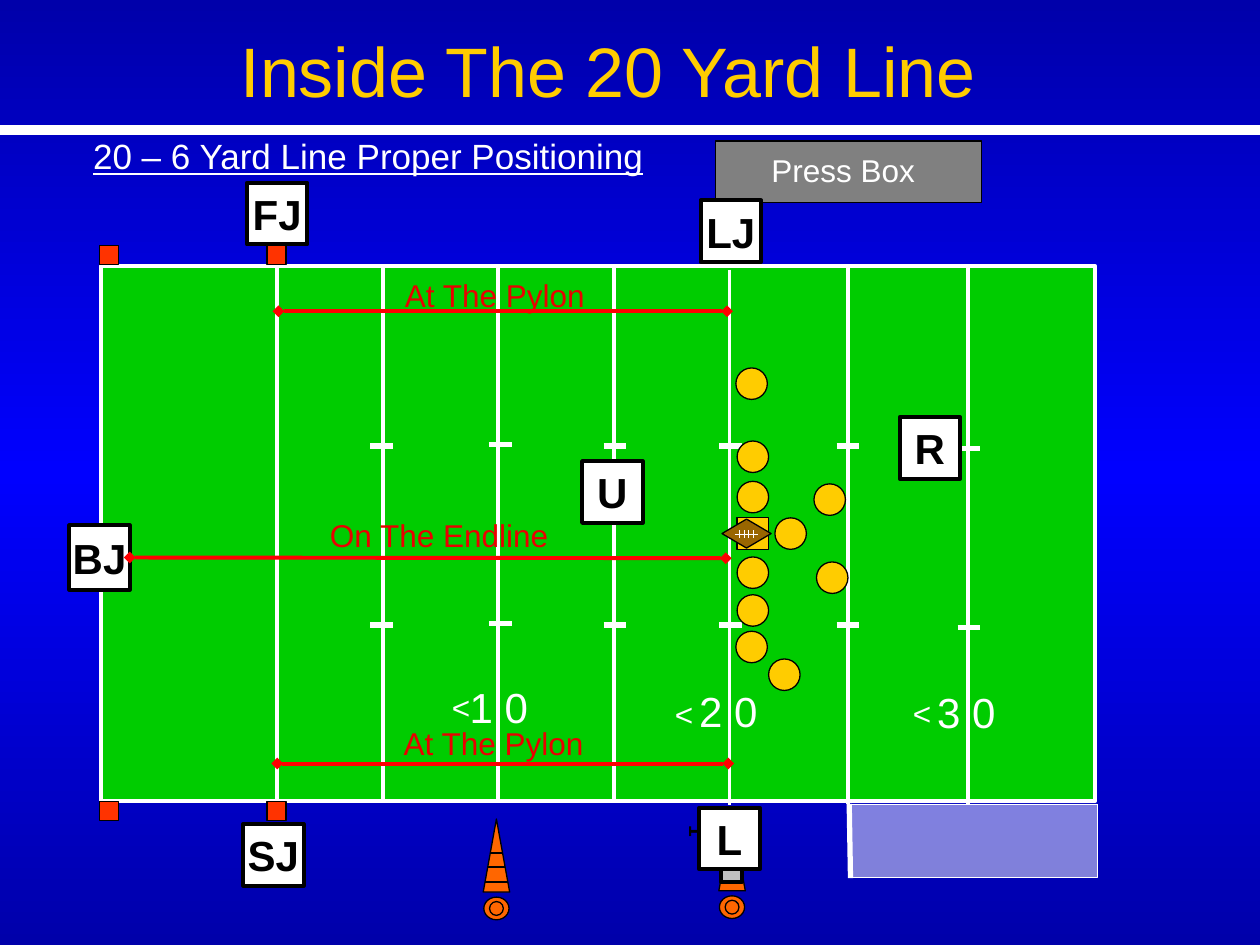
import copy
import pptx
import pptx.dml.color
import pptx.enum.dml
import pptx.enum.shapes
import pptx.enum.text
import pptx.oxml
import pptx.oxml.ns
import pptx.util

SHAPE = pptx.enum.shapes.MSO_SHAPE
ALIGN = pptx.enum.text.PP_ALIGN
ANCHOR = pptx.enum.text.MSO_ANCHOR
colour = pptx.dml.color.RGBColor.from_string
qn = pptx.oxml.ns.qn

deck = pptx.Presentation()
deck.slide_width = pptx.util.Inches(10)
deck.slide_height = pptx.util.Inches(7.5)
column = deck.slide_width / 100
row = deck.slide_height / 75
page = deck.slides.add_slide(deck.slide_layouts[5])


def draw(kind, left, top, wide, high, fill, line="000000", weight=0.75):
    shape = page.shapes.add_shape(
        kind, int(left * column), int(top * row), int(wide * column), int(high * row))
    shape.shadow.inherit = False
    if fill:
        shape.fill.solid()
        shape.fill.fore_color.rgb = colour(fill)
    else:
        shape.fill.background()
    shape.line.color.rgb = colour(line)
    shape.line.width = pptx.util.Pt(weight)
    return shape


def rule(left, top, right, bottom, line="FFFFFF", weight=2.25):
    connector = page.shapes.add_connector(
        pptx.enum.shapes.MSO_CONNECTOR.STRAIGHT,
        int(left * column), int(top * row), int(right * column), int(bottom * row))
    connector.line.color.rgb = colour(line)
    connector.line.width = pptx.util.Pt(weight)
    pptx.oxml.ns
    connector.element.spPr.append(pptx.oxml.parse_xml(
        '<a:effectLst xmlns:a="http://schemas.openxmlformats.org/drawingml/2006/main"/>'))
    return connector


backdrop = page.background.fill
backdrop.gradient()
backdrop.gradient_angle = 270
stops = page.element.find(".//" + qn("a:gsLst"))
stops.insert(1, copy.deepcopy(stops[0]))
for stop, (position, shade) in zip(
        backdrop.gradient_stops, [(0, "0000AA"), (0.5, "0000FF"), (1, "0000AA")]):
    stop.position = position
    stop.color.rgb = colour(shade)

title = page.shapes.title
title.left, title.top = int(18.1 * column), int(1.7 * row)
title.width, title.height = int(61.5 * column), int(7.7 * row)
title.text_frame.vertical_anchor = ANCHOR.TOP
para = title.text_frame.paragraphs[0]
para.alignment = ALIGN.LEFT
span = para.add_run()
span.text = "Inside The 20 Yard Line"
span.font.name = "Arial"
span.font.size = pptx.util.Pt(40)
span.font.color.rgb = colour("FFCC00")

draw(SHAPE.RECTANGLE, 56.8, 11.2, 21.1, 4.9, "808080")
rule(0, 10.3, 100, 10.3, weight=6)
draw(SHAPE.RECTANGLE, 8, 21.1, 78.9, 42.5, "00CC00", "FFFFFF", 2.25)

yard_lines = [(22, 21.1), (30.4, 21.1), (39.5, 21.1), (48.7, 21.1),
              (57.9, 21.4), (67.3, 21.3), (76.8, 21.3)]
for across, top in yard_lines:
    rule(across, top, across, top + 42.5)
hash_marks = [(30.3, 35.4), (39.7, 35.3), (48.8, 35.4),
              (58, 35.4), (67.3, 35.4), (76.9, 35.6)]
for middle, top in hash_marks:
    for down in (top, top + 14.2):
        rule(middle - 0.9, down, middle + 0.9, down, weight=3)
for left in (7.9, 21.2):
    for top in (19.5, 63.6):
        draw(SHAPE.RECTANGLE, left, top, 1.5, 1.5, "FF3300")

rule(67.4, 63.8, 67.5, 69.7, weight=3)
bench = draw(SHAPE.RECTANGLE, 67.5, 63.8, 19.6, 5.8, "FFFFFF", "FFFFFF", 0.25)
bench.line.dash_style = pptx.enum.dml.MSO_LINE.ROUND_DOT
tint = bench.element.spPr.find(qn("a:solidFill"))[0]
tint.append(tint.makeelement(qn("a:alpha"), {"val": "50000"}))

for middle, top, bands in [(39.4, 65, (2.7, 3.8, 5)), (58.1, 64.9, (5,))]:
    draw(SHAPE.ISOSCELES_TRIANGLE, middle - 1.05, top, 2.1, 5.8, "FF6600")
    for band in bands:
        reach = 1.05 * band / 5.8
        rule(middle - reach, top + band, middle + reach, top + band, "000000", 0.75)
    draw(SHAPE.OVAL, middle - 1, top + 6.2, 2, 1.8, "FF6600")
    draw(SHAPE.OVAL, middle - 0.55, top + 6.55, 1.1, 1.1, None)
draw(SHAPE.RECTANGLE, 57.2, 67.9, 1.7, 2.1, "C0C0C0", weight=2.25)

labels = [
    ("20 – 6 Yard Line Proper Positioning", 6.4, 10.2, 45.9, 4.4, 20, "FFFFFF", ALIGN.LEFT),
    ("Press Box", 60.2, 11.5, 13.4, 4, 18, "FFFFFF", ALIGN.RIGHT),
    ("1 0", 35.3, 53.6, 7.6, 5, 24, "FFFFFF", ALIGN.RIGHT),
    ("2 0", 53.5, 53.9, 7.6, 5, 24, "FFFFFF", ALIGN.RIGHT),
    ("3 0", 72.4, 54, 7.6, 5, 24, "FFFFFF", ALIGN.RIGHT),
    ("<", 34.8, 54.1, 3.5, 4, 18, "FFFFFF", ALIGN.RIGHT),
    ("<", 52.5, 54.7, 3.5, 4, 18, "FFFFFF", ALIGN.RIGHT),
    ("<", 71.4, 54.6, 3.5, 4, 18, "FFFFFF", ALIGN.RIGHT),
    ("On The Endline", 25.1, 40.5, 19.4, 4, 18, "EA0000", ALIGN.RIGHT),
    ("At The Pylon", 31.1, 21.4, 16.3, 4, 18, "EA0000", ALIGN.RIGHT),
    ("At The Pylon", 31, 57, 16.3, 4, 18, "EA0000", ALIGN.RIGHT),
    ("1", 53.9, 64.5, 2.9, 3, 12, "000000", ALIGN.LEFT),
]
for words, left, top, wide, high, size, shade, align in labels:
    box = page.shapes.add_textbox(
        int(left * column), int(top * row), int(wide * column), int(high * row))
    box.text_frame.word_wrap = size == 24
    para = box.text_frame.paragraphs[0]
    para.alignment = align
    span = para.add_run()
    span.text = words
    span.font.name = "Arial"
    span.font.size = pptx.util.Pt(size)
    span.font.color.rgb = colour(shade)
    span.font.underline = size == 20
    span.font.bold = size == 12
    box.rotation = 90 if size == 12 else 0

officials = {}
for name, left, top, high in [
        ("FJ", 19.6, 14.5, 4.9), ("U", 46.2, 36.6, 4.9), ("SJ", 19.3, 65.4, 4.9),
        ("R", 71.4, 33.1, 4.9), ("L", 55.5, 64.1, 4.9), ("LJ", 55.6, 15.9, 4.9),
        ("BJ", 5.5, 41.7, 5.1)]:
    official = draw(SHAPE.RECTANGLE, left, top, 4.8, high, "FFFFFF", weight=2.25)
    officials[name] = official
    frame = official.text_frame
    frame.margin_left = frame.margin_right = frame.margin_top = frame.margin_bottom = 0
    frame.word_wrap = False
    frame.vertical_anchor = ANCHOR.MIDDLE
    para = frame.paragraphs[0]
    para.alignment = ALIGN.CENTER
    span = para.add_run()
    span.text = name
    span.font.name = "Arial"
    span.font.size = pptx.util.Pt(24)
    span.font.bold = True
    span.font.color.rgb = colour("000000")

draw(SHAPE.RECTANGLE, 58.5, 41.1, 2.5, 2.5, "FFCC00")
for left, top in [(58.5, 38.2), (58.5, 35), (58.5, 44.2), (58.5, 47.2), (61.5, 41.1),
                  (61, 52.3), (58.4, 50.1), (58.4, 29.2), (64.6, 38.4), (64.8, 44.6)]:
    draw(SHAPE.OVAL, left, top, 2.5, 2.5, "FFCC00")

draw(SHAPE.FLOWCHART_DECISION, 57.3, 41.2, 3.9, 2.3, "996600")
rule(58.3, 42.4, 60.2, 42.4, weight=0.75)
for lace in (58.7, 59.1, 59.4, 59.8):
    rule(lace, 42.1, lace, 42.7, weight=0.75)

for left, right, down in [(22.1, 57.7, 24.7), (22, 57.8, 60.6), (10.3, 57.6, 44.3)]:
    span_arrow = rule(left, down, right, down, "FF0000")
    if left == 10.3:
        span_arrow.begin_connect(officials["BJ"], 3)
    outline = span_arrow.line._get_or_add_ln()
    for end in ("a:headEnd", "a:tailEnd"):
        outline.append(outline.makeelement(qn(end), {"type": "diamond"}))

deck.save("out.pptx")
